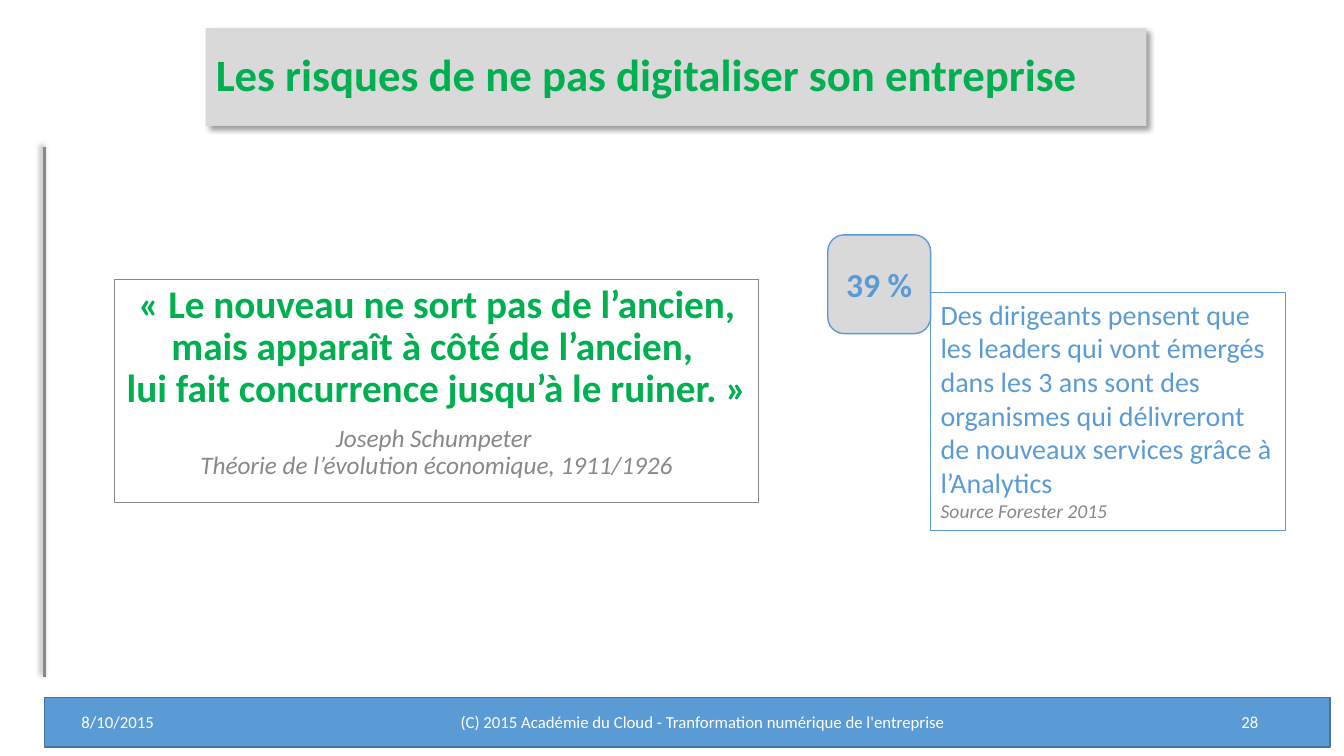
from dataclasses import dataclass

from pptx import Presentation
from pptx.dml.color import RGBColor
from pptx.enum.shapes import MSO_CONNECTOR, MSO_SHAPE
from pptx.enum.text import MSO_ANCHOR, MSO_AUTO_SIZE, PP_ALIGN
from pptx.oxml import parse_xml
from pptx.oxml.ns import nsdecls
from pptx.util import Inches, Pt


@dataclass(frozen=True)
class Theme:
    font: str = "Calibri"
    green: str = "00B050"
    blue: str = "5B9BD5"
    dark_blue: str = "43739E"
    grey: str = "87888A"
    light: str = "D9D9D9"
    white: str = "FFFFFF"
    title: int = 32
    quote: int = 28
    figure: int = 24
    body: int = 20
    author: int = 18
    source: int = 14
    footer: int = 12


T = Theme()


def rgb(color):
    return RGBColor.from_string(color)


def set_shadow(sp, angle=None):
    """Cast a soft shadow at the angle in degrees, or none at all."""
    shadow = "" if angle is None else (
        f'<a:outerShdw blurRad="{Pt(4)}" dist="{Pt(3)}" dir="{angle * 60000}" '
        'algn="ctr" rotWithShape="0"><a:srgbClr val="000000">'
        '<a:alpha val="40000"/></a:srgbClr></a:outerShdw>')
    sp._element.spPr.append(parse_xml(
        f'<a:effectLst {nsdecls("a")}>{shadow}</a:effectLst>'))


def add_text(sp, text, size, color, bold=False, italic=False,
             align=PP_ALIGN.LEFT, anchor=MSO_ANCHOR.TOP, spacing=None, before=0):
    """Add a paragraph to the shape, using its first one while that is empty."""
    tf = sp.text_frame
    tf.word_wrap = True
    tf.vertical_anchor = anchor
    p = tf.add_paragraph() if tf.text else tf.paragraphs[0]
    p.text = text
    p.alignment = align
    p.line_spacing = spacing
    p.space_before = Pt(before)
    for r in p.runs:
        f = r.font
        f.name, f.size, f.bold, f.italic = T.font, Pt(size), bold, italic
        f.color.rgb = rgb(color)


def add_box(s, kind, x, y, w, h, fill=None, line=None, width=0.75):
    sp = s.shapes.add_shape(kind, Inches(x), Inches(y), Inches(w), Inches(h))
    sp.shadow.inherit = False
    if fill:
        sp.fill.solid()
        sp.fill.fore_color.rgb = rgb(fill)
    else:
        sp.fill.background()
    sp.line.color.rgb = rgb(line)
    sp.line.width = Pt(width)
    return sp


def add_title(s, x, y, w, h):
    sp = s.shapes.title
    sp.left, sp.top, sp.width, sp.height = map(Inches, (x, y, w, h))
    sp.fill.solid()
    sp.fill.fore_color.rgb = rgb(T.light)
    set_shadow(sp, 45)
    add_text(sp, "Les risques de ne pas digitaliser son entreprise", T.title,
             T.green, bold=True, anchor=MSO_ANCHOR.MIDDLE, spacing=0.9)
    sp.text_frame.auto_size = MSO_AUTO_SIZE.NONE


def add_side_rule(s, x, y, h):
    rule = s.shapes.add_connector(MSO_CONNECTOR.STRAIGHT, Inches(x), Inches(y),
                                  Inches(x), Inches(y + h))
    rule.line.color.rgb = rgb(T.grey)
    rule.line.width = Pt(2)
    set_shadow(rule, 225)


def add_footer(s, x, y, w, h):
    add_box(s, MSO_SHAPE.RECTANGLE, x, y, w, h, T.blue, T.dark_blue, 1)
    label_h = 0.23
    for dx, label_w, align, text in (
            (0.27, 1.15, PP_ALIGN.LEFT, "8/10/2015"),
            (1.7, 9.66, PP_ALIGN.CENTER,
             "(C) 2015 Académie du Cloud - Tranformation numérique de l'entreprise"),
            (11.62, 0.52, PP_ALIGN.RIGHT, "28")):
        sp = s.shapes.add_textbox(Inches(x + dx), Inches(y + (h - label_h) / 2),
                                  Inches(label_w), Inches(label_h))
        add_text(sp, text, T.footer, T.white, align=align,
                 anchor=MSO_ANCHOR.MIDDLE)


def add_quote(s, x, y, w, h):
    sp = add_box(s, MSO_SHAPE.RECTANGLE, x, y, w, h, line=T.grey)
    add_text(sp, "« Le nouveau ne sort pas de l’ancien, mais apparaît à côté de "
             "l’ancien, \vlui fait concurrence jusqu’à le ruiner. »",
             T.quote, T.green, bold=True, align=PP_ALIGN.CENTER, spacing=0.9)
    add_text(sp, "Joseph Schumpeter \vThéorie de l’évolution économique, 1911/1926",
             T.author, T.grey, italic=True, align=PP_ALIGN.CENTER,
             spacing=0.9, before=10)


def add_key_figure(s, x, y, w, h):
    """Place a figure in a badge, with its explanation to the lower right."""
    badge_w, badge_h, drop = 1.02, 0.98, 0.57
    badge = add_box(s, MSO_SHAPE.ROUNDED_RECTANGLE, x, y, badge_w, badge_h,
                    T.light, T.blue, 1)
    add_text(badge, "39 %", T.figure, T.blue, bold=True,
             align=PP_ALIGN.CENTER, anchor=MSO_ANCHOR.MIDDLE)
    note = add_box(s, MSO_SHAPE.RECTANGLE, x + badge_w, y + drop,
                   w - badge_w, h - drop, line=T.blue)
    add_text(note, "Des dirigeants pensent que les leaders qui vont émergés dans "
             "les 3 ans sont des organismes qui délivreront de nouveaux services "
             "grâce à l’Analytics", T.body, T.blue)
    add_text(note, "Source Forester 2015", T.source, T.grey, italic=True)


def main():
    prs = Presentation()
    prs.slide_width, prs.slide_height = Inches(13.33), Inches(7.5)
    s = prs.slides.add_slide(prs.slide_layouts[5])
    add_footer(s, 0.44, 6.92, 12.75, 0.49)
    add_side_rule(s, 0.44, 1.46, 5.26)
    add_title(s, 2.04, 0.28, 9.33, 0.97)
    add_quote(s, 1.14, 2.77, 6.38, 2.22)
    add_key_figure(s, 8.21, 2.33, 4.54, 2.93)
    prs.save("out.pptx")


if __name__ == "__main__":
    main()
